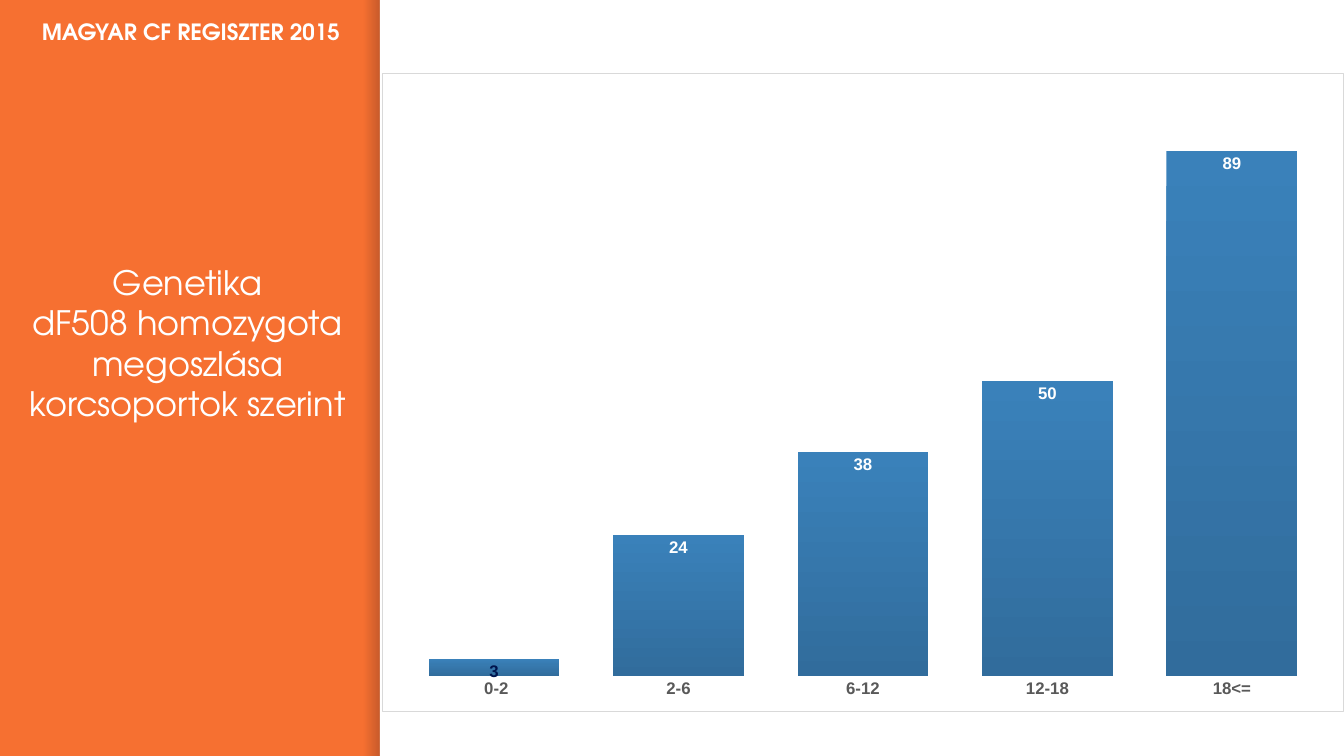
import pptx
import pptx.chart.data
import pptx.dml.color
import pptx.enum.chart
import pptx.enum.shapes
import pptx.enum.text
import pptx.oxml.ns
import pptx.util
from lxml import etree

PX = 12192000 / 1344


def px(*lengths):
    return [pptx.util.Emu(round(n * PX)) for n in lengths]


def rgb(value):
    return pptx.dml.color.RGBColor.from_string(value)


def style_font(font, size, color, name, bold=False):
    font.size = pptx.util.Pt(size)
    font.color.rgb = rgb(color)
    font.name = name
    font.bold = bold


def write(tf, text, **style):
    """Fill a text frame with one centred paragraph; newlines become line breaks."""
    tf.word_wrap = True
    tf.auto_size = pptx.enum.text.MSO_AUTO_SIZE.NONE
    tf.vertical_anchor = pptx.enum.text.MSO_ANCHOR.TOP
    p = tf.paragraphs[0]
    p.alignment = pptx.enum.text.PP_ALIGN.CENTER
    for i, line in enumerate(text.split("\n")):
        if i:
            p.add_line_break()
        r = p.add_run()
        r.text = line
        style_font(r.font, **style)


def gradient(fill, colors, angle):
    fill.gradient()
    fill.gradient_angle = angle
    for stop, color in zip(fill.gradient_stops, colors):
        stop.color.rgb = rgb(color)


class Deck:
    heading_font = "TeX Gyre Adventor"
    chart_font = "Arial"
    white = "FFFFFF"

    def __init__(self, background):
        self.prs = pptx.Presentation()
        self.prs.slide_width, self.prs.slide_height = px(1344, 756)
        self.s = self.prs.slides.add_slide(self.prs.slide_layouts[5])
        self.s.background.fill.solid()
        self.s.background.fill.fore_color.rgb = rgb(background)

    def rect(self, *box):
        sp = self.s.shapes.add_shape(pptx.enum.shapes.MSO_SHAPE.RECTANGLE, *px(*box))
        sp.shadow.inherit = False
        sp.line.fill.background()
        return sp

    def panel(self, *box):
        sp = self.rect(*box)
        sp.fill.solid()
        sp.fill.fore_color.rgb = rgb(self.white)

    def edge_shade(self, *box, color, alphas):
        sp = self.rect(*box)
        gradient(sp.fill, [color] * 2, 0)
        qn = pptx.oxml.ns.qn
        stops = sp._element.spPr.iter(qn("a:srgbClr"))
        for stop, alpha in zip(stops, alphas):
            etree.SubElement(stop, qn("a:alpha")).set("val", str(alpha * 1000))

    def title(self, text, *box, size):
        sp = self.s.shapes.title
        sp.left, sp.top, sp.width, sp.height = px(*box)
        tf = sp.text_frame
        tf.margin_left = tf.margin_right = tf.margin_top = tf.margin_bottom = px(10)[0]
        write(tf, text, size=size, color=self.white, name=self.heading_font)

    def label(self, text, *box, size):
        sp = self.s.shapes.add_textbox(*px(*box))
        write(sp.text_frame, text, size=size, color=self.white,
              name=self.heading_font, bold=True)

    def columns(self, categories, values, *box):
        enum = pptx.enum.chart
        data = pptx.chart.data.CategoryChartData()
        data.categories = categories
        data.add_series("Series 1", values)
        chart = self.s.shapes.add_chart(
            enum.XL_CHART_TYPE.COLUMN_CLUSTERED, *px(*box), data).chart
        chart.has_legend = chart.has_title = False
        style_font(chart.font, 10, "000000", self.chart_font)

        # Axes
        axis = chart.category_axis
        axis.major_tick_mark = enum.XL_TICK_MARK.NONE
        axis.format.line.fill.background()
        style_font(axis.tick_labels.font, 12, "595959", self.chart_font, True)
        scale = chart.value_axis
        scale.minimum_scale, scale.maximum_scale = 0, 100
        scale.has_major_gridlines = False
        scale.visible = False

        # Columns and their values
        plot = chart.plots[0]
        plot.gap_width = 41
        plot.vary_by_categories = False
        series = plot.series[0]
        gradient(series.format.fill, ["3A81BA", "316C9C"], 270)
        labels = series.data_labels
        labels.show_value = True
        labels.position = enum.XL_LABEL_POSITION.INSIDE_END
        style_font(labels.font, 12, self.white, self.chart_font, True)
        first = series.points[0].data_label
        style_font(first.font, 12, "00144D", self.chart_font, True)
        first.position = enum.XL_LABEL_POSITION.INSIDE_END

        self.frame_chart(chart, x=0.02, y=0.02, w=0.96, h=0.925)
        return chart

    def frame_chart(self, chart, **plot_box):
        """Give the chart a thin border and fix its inner plot area."""
        ns = pptx.oxml.ns
        border = pptx.oxml.parse_xml(
            f'<c:spPr {ns.nsdecls("c", "a")}><a:solidFill><a:srgbClr val="{self.white}"/>'
            '</a:solidFill><a:ln w="9525"><a:solidFill><a:srgbClr val="D9D9D9"/>'
            '</a:solidFill></a:ln></c:spPr>')
        space = chart._chartSpace
        space.find(ns.qn("c:chart")).addnext(border)
        sides = "".join(f'<c:{k}Mode val="edge"/>' for k in "xy")
        sides += "".join(f'<c:{k} val="{v}"/>' for k, v in plot_box.items())
        layout = pptx.oxml.parse_xml(
            f'<c:layout {ns.nsdecls("c")}><c:manualLayout><c:layoutTarget val="inner"/>'
            f'{sides}</c:manualLayout></c:layout>')
        area = space.find(".//" + ns.qn("c:plotArea"))
        for old in area.findall(ns.qn("c:layout")):
            area.remove(old)
        area.insert(0, layout)


def main():
    deck = Deck(background="F67031")

    # Orange side band with a shaded edge, white panel beside it
    deck.edge_shade(364, 0, 16, 756, color="000014", alphas=(0, 20))
    deck.panel(380, 0, 964, 756)

    # Headings
    deck.title("Genetika\ndF508 homozygota megoszlása korcsoportok szerint",
               16, 252, 343, 114, size=24)
    deck.label("MAGYAR CF REGISZTER 2015", 0, 13, 382, 37, size=16)

    # Age groups
    deck.columns([" 0-2", "2-6", "6-12", "12-18", "18<="], [3, 24, 38, 50, 89],
                 382, 73, 962, 639)

    deck.prs.save("out.pptx")


if __name__ == "__main__":
    main()
